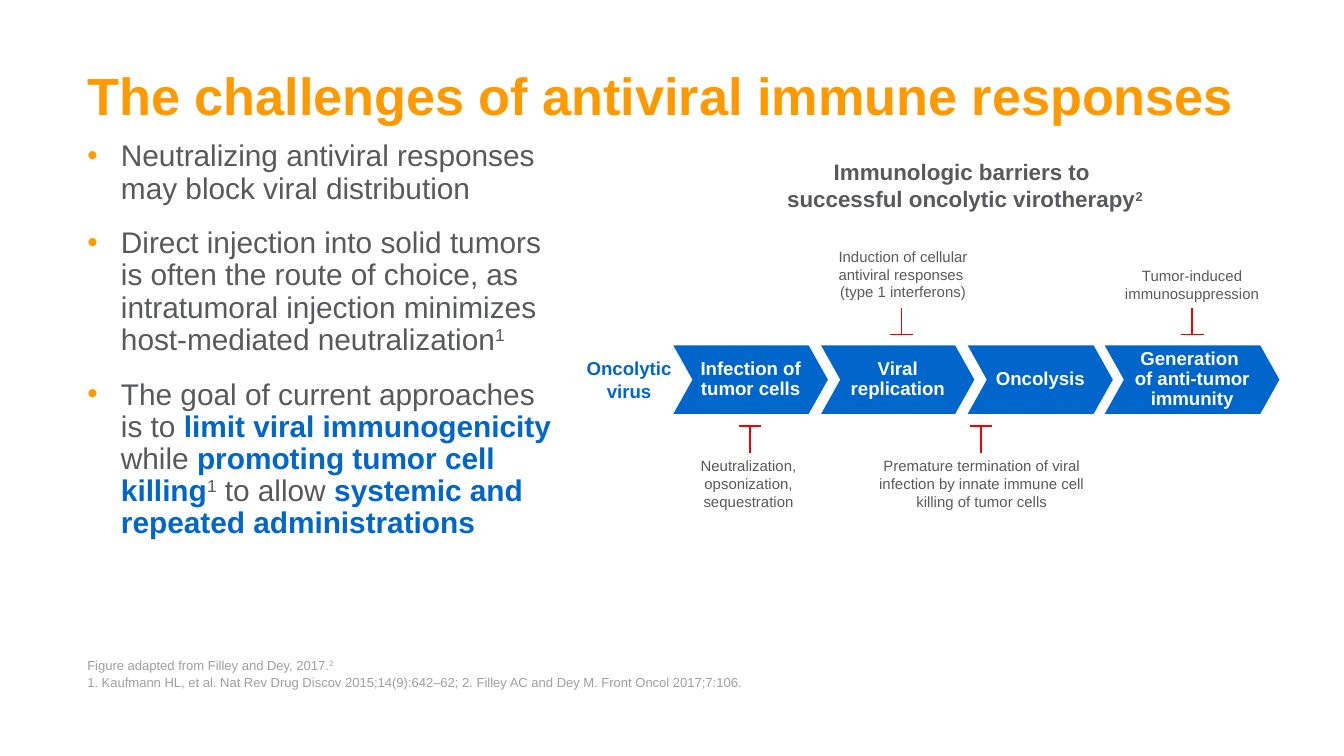
from typing import NamedTuple

from lxml.etree import SubElement
from pptx import Presentation
from pptx.dml.color import RGBColor
from pptx.enum.shapes import MSO_CONNECTOR, MSO_SHAPE
from pptx.enum.text import MSO_ANCHOR, MSO_AUTO_SIZE, PP_ALIGN
from pptx.oxml.ns import qn
from pptx.util import Inches, Pt

COLORS = {
    "title": "FF9900",
    "body": "58595B",
    "accent": "0066CC",
    "note": "9E9FA2",
    "barrier": "F90000",
    "white": "FFFFFF",
}
FONT = "Arial"
SLIDE_WIDTH = 10
SLIDE_HEIGHT = SLIDE_WIDTH * 9 / 16
STEP_TOP, STEP_HEIGHT = 2.57, 0.51
STEM_LENGTH, BAR_WIDTH = 0.2, 0.17


class Box(NamedTuple):
    left: float
    top: float
    width: float
    height: float


class Run(NamedTuple):
    text: str
    color: str | None = None
    bold: bool | None = None
    raised: bool = False


class Step(NamedTuple):
    left: float
    width: float
    paragraphs: list[str]


class Barrier(NamedTuple):
    center: float
    stem_start: float
    bar_top: float
    label: str
    box: Box


RAISED_ONE = Run("1", raised=True)
RAISED_TWO = Run("2", raised=True)

BULLETS = [
    ["Neutralizing antiviral responses may block viral distribution"],
    [
        "Direct injection into solid tumors \nis often the route of choice, as "
        "intratumoral injection minimizes host-mediated neutralization",
        RAISED_ONE,
    ],
    [
        "The goal of current approaches is to ",
        Run("limit viral immunogenicity ", "accent", True),
        "while ",
        Run("promoting tumor cell killing", "accent", True),
        RAISED_ONE,
        " to allow ",
        Run("systemic and repeated administrations", "accent", True),
    ],
]
NOTES = [
    ["Figure adapted from Filley and Dey, 2017.", RAISED_TWO],
    ["1. Kaufmann HL, et al. Nat Rev Drug Discov 2015;14(9):642–62; "
     "2. Filley AC and Dey M. Front Oncol 2017;7:106."],
]
STEPS = [
    Step(5.01, 1.15, ["Infection of tumor cells"]),
    Step(6.11, 1.14, ["Viral", "replication"]),
    Step(7.2, 1.08, ["Oncolysis"]),
    Step(8.22, 1.3, ["Generation \nof anti-tumor immunity"]),
]
ABOVE = (2.29, 2.29 + STEM_LENGTH)
BELOW = (3.37, 3.37 - STEM_LENGTH)
BARRIERS = [
    Barrier(5.58, *BELOW, "Neutralization, opsonization, sequestration",
            Box(5.13, 3.4, 0.88, 0.4)),
    Barrier(6.71, *ABOVE, "Induction of cellular antiviral responses \n(type 1 interferons)",
            Box(6.13, 1.84, 1.18, 0.4)),
    Barrier(7.3, *BELOW, "Premature termination of viral infection by innate immune cell "
            "killing of tumor cells", Box(6.52, 3.4, 1.57, 0.4)),
    Barrier(8.87, *ABOVE, "Tumor-induced immunosuppression",
            Box(8.28, 1.98, 1.18, 0.27)),
]


def rgb(name: str) -> RGBColor:
    return RGBColor.from_string(COLORS[name])


def add_run(paragraph, run: Run, size: float, color: str, bold: bool) -> None:
    for index, line in enumerate(run.text.split("\n")):
        if index:
            paragraph.add_line_break()
        piece = paragraph.add_run()
        piece.text = line
        font = piece.font
        font.name, font.size = FONT, Pt(size)
        font.bold = bold if run.bold is None else run.bold
        font.color.rgb = rgb(run.color or color)
        if run.raised:
            piece._r.get_or_add_rPr().set("baseline", "30000")


def add_bullet(paragraph, color: str) -> None:
    properties = paragraph._p.get_or_add_pPr()
    properties.set("marL", str(Inches(0.25)))
    properties.set("indent", str(-Inches(0.25)))
    bullet_color = SubElement(properties, qn("a:buClr"))
    SubElement(bullet_color, qn("a:srgbClr")).set("val", COLORS[color])
    SubElement(properties, qn("a:buFont")).set("typeface", FONT)
    SubElement(properties, qn("a:buChar")).set("char", "•")


def write(shape, paragraphs: list, *, size: float, color: str = "body", bold: bool = False,
          align=PP_ALIGN.LEFT, anchor=MSO_ANCHOR.TOP, line_spacing: float = 1.0,
          before: float = 0, after: float = 0, inset: float = 0,
          bullet: str | None = None) -> None:
    frame = shape.text_frame
    frame.word_wrap = True
    frame.auto_size = MSO_AUTO_SIZE.NONE
    frame.vertical_anchor = anchor
    frame.margin_left = frame.margin_right = Inches(inset)
    frame.margin_top = frame.margin_bottom = Inches(inset)
    for index, content in enumerate(paragraphs):
        paragraph = frame.add_paragraph() if index else frame.paragraphs[0]
        paragraph.alignment = align
        paragraph.line_spacing = line_spacing
        paragraph.space_before, paragraph.space_after = Pt(before), Pt(after)
        if bullet:
            add_bullet(paragraph, bullet)
        for part in [content] if isinstance(content, str) else content:
            run = part if isinstance(part, Run) else Run(part)
            add_run(paragraph, run, size, color, bold)


def add_text(slide, box: Box, paragraphs: list, **text_format) -> None:
    write(slide.shapes.add_textbox(*map(Inches, box)), paragraphs, **text_format)


def add_step(slide, step: Step) -> None:
    box = Box(step.left, STEP_TOP, step.width, STEP_HEIGHT)
    shape = slide.shapes.add_shape(MSO_SHAPE.CHEVRON, *map(Inches, box))
    shape.adjustments[0] = 0.28
    shape.shadow.inherit = False
    shape.fill.solid()
    shape.fill.fore_color.rgb = rgb("accent")
    shape.line.fill.background()
    write(shape, step.paragraphs, size=10, color="white", bold=True, inset=0.05,
          align=PP_ALIGN.CENTER, anchor=MSO_ANCHOR.MIDDLE, line_spacing=0.9)


def add_line(slide, *ends: float) -> None:
    line = slide.shapes.add_connector(MSO_CONNECTOR.STRAIGHT, *map(Inches, ends))
    line.line.color.rgb = rgb("barrier")
    line.line.width = Pt(0.75)
    SubElement(line._element.spPr, qn("a:effectLst"))


def add_barrier(slide, barrier: Barrier) -> None:
    center, bar_top = barrier.center, barrier.bar_top
    add_line(slide, center, barrier.stem_start, center, bar_top)
    add_line(slide, center - BAR_WIDTH / 2, bar_top, center + BAR_WIDTH / 2, bar_top)
    add_text(slide, barrier.box, [barrier.label], size=8,
             align=PP_ALIGN.CENTER, anchor=MSO_ANCHOR.MIDDLE)


def main() -> None:
    """Build the slide on antiviral immune responses and save it."""
    presentation = Presentation()
    presentation.slide_width = Inches(SLIDE_WIDTH)
    presentation.slide_height = Inches(SLIDE_HEIGHT)
    slide = presentation.slides.add_slide(presentation.slide_layouts[5])

    title = slide.shapes.title
    title.left, title.top, title.width, title.height = map(Inches, Box(0.65, 0.3, 8.85, 0.64))
    write(title, ["The challenges of antiviral immune responses"], size=28, color="title",
          bold=True, anchor=MSO_ANCHOR.BOTTOM, line_spacing=0.9)
    add_text(slide, Box(0.65, 1.05, 3.48, 3.57), BULLETS, size=16, line_spacing=0.9,
             before=6, after=6, bullet="title")
    add_text(slide, Box(0.65, 4.81, 8.47, 0.33), NOTES, size=7, color="note",
             anchor=MSO_ANCHOR.BOTTOM, line_spacing=0.9, after=2)
    add_text(slide, Box(5.37, 1.18, 3.62, 0.56),
             [["Immunologic barriers to \nsuccessful oncolytic virotherapy", RAISED_TWO]],
             size=12, bold=True, align=PP_ALIGN.CENTER, before=6, after=4.5)

    for step in STEPS:
        add_step(slide, step)
    for barrier in BARRIERS:
        add_barrier(slide, barrier)
    add_text(slide, Box(4.34, 2.69, 0.68, 0.27), ["Oncolytic virus"], size=10, color="accent",
             bold=True, align=PP_ALIGN.CENTER, anchor=MSO_ANCHOR.MIDDLE)
    presentation.save("out.pptx")


if __name__ == "__main__":
    main()
